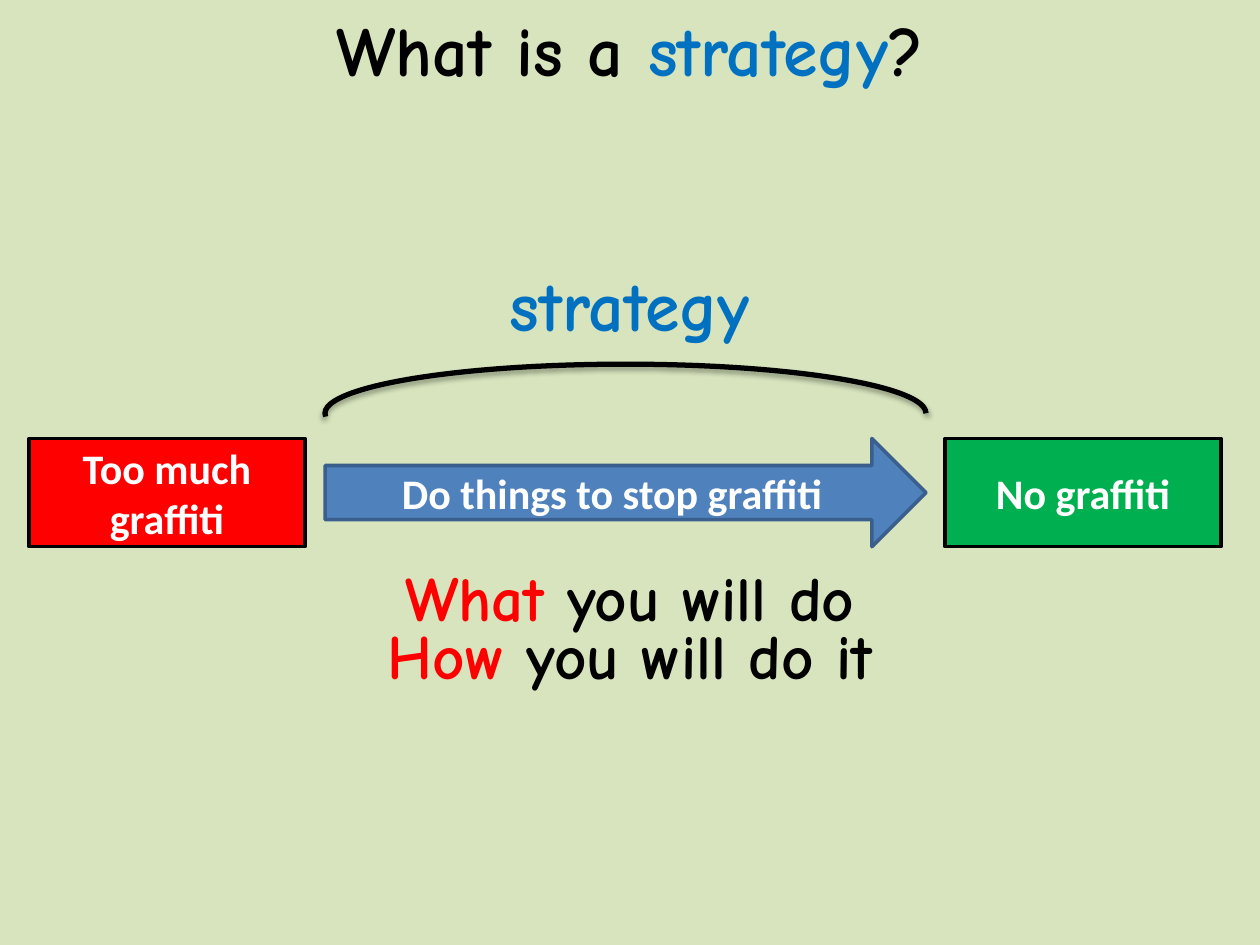
from dataclasses import dataclass

import pptx
import pptx.dml.color
import pptx.enum.shapes
import pptx.enum.text
import pptx.oxml
import pptx.oxml.ns
import pptx.util
from pptx.util import Inches

SHAPES = pptx.enum.shapes.MSO_SHAPE
ALIGN = pptx.enum.text.PP_ALIGN


@dataclass(frozen=True)
class Theme:
    background: str = "D7E4BD"
    black: str = "000000"
    white: str = "FFFFFF"
    blue: str = "0070C0"
    red: str = "FF0000"
    green: str = "00B050"
    arrow: str = "4F81BD"
    arrow_edge: str = "3A5F8C"
    heading_font: str = "Comic Neue"
    label_font: str = "Calibri"
    heading_size: int = 40
    note_size: int = 36
    label_size: int = 24
    edge_width: int = 2
    arc_width: int = 3


THEME = Theme()


@dataclass(frozen=True)
class Span:
    text: str
    color: str


@dataclass(frozen=True)
class Caption:
    top: float
    height: float
    size: int
    spans: tuple[Span, ...]


@dataclass(frozen=True)
class Stage:
    text: str
    kind: pptx.enum.shapes.MSO_SHAPE
    left: float
    width: float
    fill: str
    edge: str


PAGE_WIDTH, PAGE_HEIGHT = 10, 7.5
STAGE_TOP, STAGE_HEIGHT = 3.48, 0.86
BOX_WIDTH = 2.19
ARROW_LEFT, ARROW_WIDTH = 2.58, 4.77
ARC_TOP, ARC_HEIGHT = 2.89, 0.78
ARC_START, ARC_END = 107.62, 0

STAGES = (
    Stage("Too much graffiti", SHAPES.RECTANGLE, 0.23, BOX_WIDTH, THEME.red, THEME.black),
    Stage("No graffiti", SHAPES.RECTANGLE, 7.5, BOX_WIDTH, THEME.green, THEME.black),
    Stage("Do things to stop graffiti", SHAPES.RIGHT_ARROW, ARROW_LEFT, ARROW_WIDTH,
          THEME.arrow, THEME.arrow_edge),
)

STRATEGY = Span("strategy", THEME.blue)
ARC_CAPTION = Caption(2.03, 0.77, THEME.heading_size, (STRATEGY,))
CAPTIONS = (
    Caption(0, 0.77, THEME.heading_size,
            (Span("What is a ", THEME.black), STRATEGY, Span("?", THEME.black))),
    Caption(4.38, 0.71, THEME.note_size,
            (Span("What", THEME.red), Span(" you will do", THEME.black))),
    Caption(4.84, 0.71, THEME.note_size,
            (Span("How", THEME.red), Span(" you will do it", THEME.black))),
)


def rgb(color: str) -> pptx.dml.color.RGBColor:
    return pptx.dml.color.RGBColor.from_string(color)


def add_span(para, text: str, *, font: str, size: int, color: str) -> None:
    run = para.add_run()
    run.text = text
    run.font.name = font
    run.font.size = pptx.util.Pt(size)
    run.font.bold = True
    run.font.color.rgb = rgb(color)


def set_edge(shape, color: str, width: int) -> None:
    shape.line.color.rgb = rgb(color)
    shape.line.width = pptx.util.Pt(width)


def add_caption(page, caption: Caption) -> None:
    """Add a line of centred text across the full page width."""
    box = page.shapes.add_textbox(
        Inches(0), Inches(caption.top), Inches(PAGE_WIDTH), Inches(caption.height))
    frame = box.text_frame
    frame.word_wrap = True
    frame.auto_size = pptx.enum.text.MSO_AUTO_SIZE.SHAPE_TO_FIT_TEXT
    para = frame.paragraphs[0]
    para.alignment = ALIGN.CENTER
    for span in caption.spans:
        add_span(para, span.text, font=THEME.heading_font, size=caption.size, color=span.color)


def add_stage(page, stage: Stage) -> None:
    shape = page.shapes.add_shape(
        stage.kind, Inches(stage.left), Inches(STAGE_TOP),
        Inches(stage.width), Inches(STAGE_HEIGHT))
    shape.shadow.inherit = False
    shape.fill.solid()
    shape.fill.fore_color.rgb = rgb(stage.fill)
    set_edge(shape, stage.edge, THEME.edge_width)
    frame = shape.text_frame
    frame.word_wrap = True
    frame.vertical_anchor = pptx.enum.text.MSO_ANCHOR.MIDDLE
    para = frame.paragraphs[0]
    para.alignment = ALIGN.CENTER
    add_span(para, stage.text, font=THEME.label_font, size=THEME.label_size, color=THEME.white)


def add_soft_shadow(shape) -> None:
    shape.shadow.inherit = False
    effects = shape.element.spPr.find(pptx.oxml.ns.qn("a:effectLst"))
    effects.append(pptx.oxml.parse_xml(
        f'<a:outerShdw {pptx.oxml.ns.nsdecls("a")} blurRad="{pptx.util.Pt(3.1)}" '
        f'dist="{pptx.util.Pt(1.8)}" dir="5400000" rotWithShape="0">'
        f'<a:srgbClr val="{THEME.black}"><a:alpha val="35000"/></a:srgbClr></a:outerShdw>'))


def add_strategy_arc(page) -> None:
    arc = page.shapes.add_shape(
        SHAPES.ARC, Inches(ARROW_LEFT), Inches(ARC_TOP),
        Inches(ARROW_WIDTH), Inches(ARC_HEIGHT))
    arc.adjustments[0] = ARC_START
    arc.adjustments[1] = ARC_END
    arc.fill.background()
    set_edge(arc, THEME.black, THEME.arc_width)
    add_soft_shadow(arc)


def main() -> None:
    deck = pptx.Presentation()
    deck.slide_width = Inches(PAGE_WIDTH)
    deck.slide_height = Inches(PAGE_HEIGHT)
    page = deck.slides.add_slide(deck.slide_layouts[6])
    page.background.fill.solid()
    page.background.fill.fore_color.rgb = rgb(THEME.background)

    add_caption(page, ARC_CAPTION)
    for stage in STAGES:
        add_stage(page, stage)
    add_strategy_arc(page)
    for caption in CAPTIONS:
        add_caption(page, caption)
    deck.save("out.pptx")


if __name__ == "__main__":
    main()
